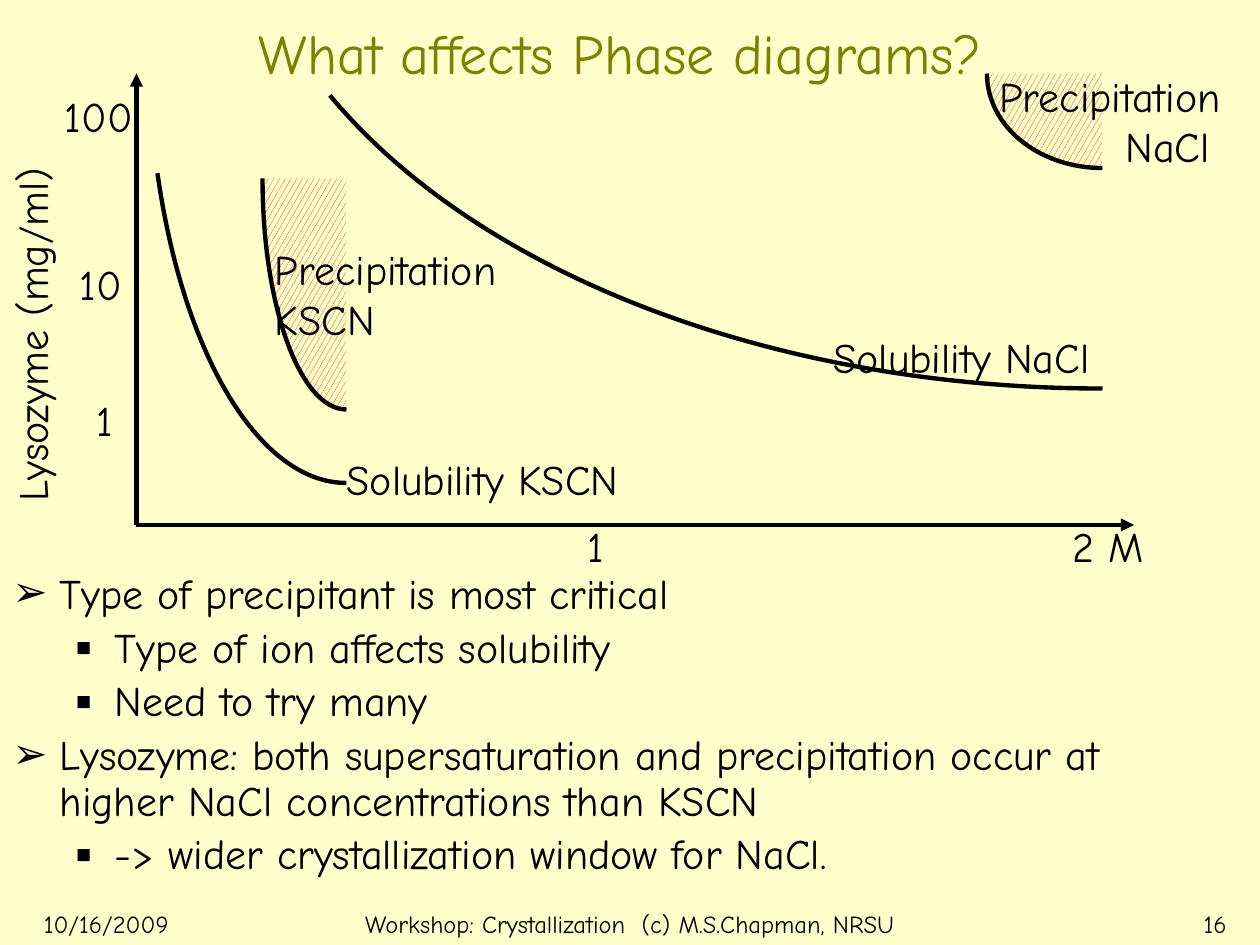
import dataclasses

import pptx
import pptx.dml.color
import pptx.enum.dml
import pptx.enum.shapes
import pptx.enum.text
import pptx.oxml.ns
import pptx.util
from lxml import etree

Pt = pptx.util.Pt
ALIGN = pptx.enum.text.PP_ALIGN
ANCHOR = pptx.enum.text.MSO_ANCHOR
FONT = "Comic Neue"
HUES = {"back": "FFFFCC", "ink": "000000", "title": "808000", "hatch": "FF0000"}
Point = tuple[float, float]


@dataclasses.dataclass
class Label:
    text: str
    left: float
    top: float
    width: float
    height: float = 36
    size: float = 24
    align: ALIGN = ALIGN.LEFT
    turn: float = 0
    tab: float = 0


@dataclasses.dataclass
class Curve:
    """A cubic Bezier; a corner closes it into a hatched zone."""
    nodes: list[Point]
    corner: Point | None = None


@dataclasses.dataclass
class Item:
    text: str
    level: int = 0


LABELS = [
    Label("10/16/2009", 18, 516, 150, 12, 14),
    Label("Workshop: Crystallization  (c) M.S.Chapman, NRSU", 174, 516, 372, 12, 14,
          ALIGN.CENTER),
    Label("16", 558, 516, 150, 12, 14, ALIGN.RIGHT),
    Label("1", 328.5, 294, 25),
    Label("2 M", 606, 294, 58),
    Label("Lysozyme (mg/ml)", -89.5, 168, 215, turn=270),
    Label("1", 48, 222, 25),
    Label("10", 38.5, 144, 40),
    Label("100", 30, 48, 66),
    Label("Solubility KSCN", 191, 255.5, 193),
    Label("Solubility NaCl", 436.5, 186, 193, align=ALIGN.RIGHT),
    Label("Precipitation\vKSCN", 150, 135.5, 150, 65),
    Label("Precipitation\v\tNaCl", 564, 36.5, 150, 65, tab=72),
]
CURVES = [
    Curve([(198, 276), (149, 276), (105, 204.5), (90, 99)]),
    Curve([(198, 234), (171.5, 234), (150, 175), (150, 102)], (198, 102)),
    Curve([(630, 222), (444, 222), (274, 157.5), (188.5, 54.5)]),
    Curve([(630, 96), (593.5, 96), (564, 72), (564, 42)], (630, 42)),
]
ITEMS = [
    Item("Type of precipitant is most critical"),
    Item("Type of ion affects solubility", 1),
    Item("Need to try many", 1),
    Item("Lysozyme: both supersaturation and precipitation occur at "
         "higher NaCl concentrations than KSCN"),
    Item("-> wider crystallization window for NaCl.", 1),
]
MARKS = [("➢", 27, 27), ("▪", 58.5, 22.5)]  # mark, margin, hang
ORIGIN = (78, 300)
AXES = [(78, 42), (648, 300)]  # far ends


def paint(name: str) -> pptx.dml.color.RGBColor:
    return pptx.dml.color.RGBColor.from_string(HUES[name])


def add(node, tag: str, **attrs: str):
    return etree.SubElement(node, pptx.oxml.ns.qn(tag), attrs)


def write(para, text: str, *, size: float = 24, hue: str = "ink",
          align: ALIGN = ALIGN.LEFT) -> None:
    para.text = text
    para.alignment = align
    for run in para.runs:
        run.font.name = FONT
        run.font.size = Pt(size)
        run.font.color.rgb = paint(hue)


def draw_label(slide, label: Label) -> None:
    box = slide.shapes.add_textbox(
        Pt(label.left), Pt(label.top), Pt(label.width), Pt(label.height))
    box.rotation = label.turn
    box.text_frame.word_wrap = True
    para = box.text_frame.paragraphs[0]
    write(para, label.text, size=label.size, align=label.align)
    if label.tab:
        stops = add(para._p.get_or_add_pPr(), "a:tabLst")
        add(stops, "a:tab", pos=str(int(Pt(label.tab))), algn="l")


def draw_list(slide, items: list[Item]) -> None:
    box = slide.shapes.add_textbox(Pt(0), Pt(324), Pt(696), Pt(198))
    frame = box.text_frame
    frame.word_wrap = True
    for index, item in enumerate(items):
        para = frame.add_paragraph() if index else frame.paragraphs[0]
        write(para, item.text)
        para.level = item.level
        para.line_spacing = 0.9
        para.space_before = Pt(4.8)
        mark, margin, hang = MARKS[item.level]
        props = para._p.get_or_add_pPr()
        props.set("marL", str(int(Pt(margin))))
        props.set("indent", str(-int(Pt(hang))))
        add(props, "a:buFont", typeface=FONT)
        add(props, "a:buChar", char=mark)


def draw_axis(slide, end: Point) -> None:
    axis = slide.shapes.add_connector(
        pptx.enum.shapes.MSO_CONNECTOR.STRAIGHT, *map(Pt, ORIGIN), *map(Pt, end))
    axis.line.color.rgb = paint("ink")
    axis.line.width = Pt(2.5)
    add(axis.line._get_or_add_ln(), "a:tailEnd", type="triangle")
    add(axis._element.spPr, "a:effectLst")


def bend(shape, curve: Curve) -> None:
    """Turn the straight outline into a Bezier stroke and, if any, its zone."""
    def step(route, tag: str, points: list[Point]) -> None:
        node = add(route, tag)
        for x, y in points:
            add(node, "a:pt", x=str(Pt(x) - shape.left), y=str(Pt(y) - shape.top))

    routes = shape._element.spPr.find(".//" + pptx.oxml.ns.qn("a:pathLst"))
    for old in list(routes):
        routes.remove(old)
    size = {"w": str(shape.width), "h": str(shape.height)}
    kinds = [{"fill": "none"}] + ([{"stroke": "0"}] if curve.corner else [])
    for kind in kinds:
        route = add(routes, "a:path", **size, **kind)
        step(route, "a:moveTo", curve.nodes[:1])
        step(route, "a:cubicBezTo", curve.nodes[1:])
        if "stroke" in kind:
            step(route, "a:lnTo", [curve.corner])
            add(route, "a:close")


def draw_curve(slide, curve: Curve) -> None:
    dots = [(Pt(x), Pt(y)) for x, y in curve.nodes]
    form = slide.shapes.build_freeform(*dots[0])
    form.add_line_segments(dots[1:], close=False)
    shape = form.convert_to_shape()
    bend(shape, curve)
    shape.shadow.inherit = False
    shape.line.color.rgb = paint("ink")
    shape.line.width = Pt(2.5)
    if curve.corner:
        shape.fill.patterned()
        shape.fill.pattern = pptx.enum.dml.MSO_PATTERN.LARGE_CONFETTI
        shape.fill.fore_color.rgb = paint("hatch")
        shape.fill.back_color.rgb = paint("back")
    else:
        shape.fill.background()


def main() -> None:
    deck = pptx.Presentation()
    deck.slide_width, deck.slide_height = Pt(720), Pt(540)
    slide = deck.slides.add_slide(deck.slide_layouts[5])
    slide.background.fill.solid()
    slide.background.fill.fore_color.rgb = paint("back")

    title = slide.shapes.title
    title.left, title.top, title.width, title.height = map(Pt, (0, 12, 720, 36))
    title.text_frame.vertical_anchor = ANCHOR.MIDDLE
    write(title.text_frame.paragraphs[0], "What affects Phase diagrams? ",
          size=32, hue="title", align=ALIGN.CENTER)

    draw_list(slide, ITEMS)
    for end in AXES:
        draw_axis(slide, end)
    for curve in CURVES:
        draw_curve(slide, curve)
    for label in LABELS:
        draw_label(slide, label)
    deck.save("out.pptx")


if __name__ == "__main__":
    main()
